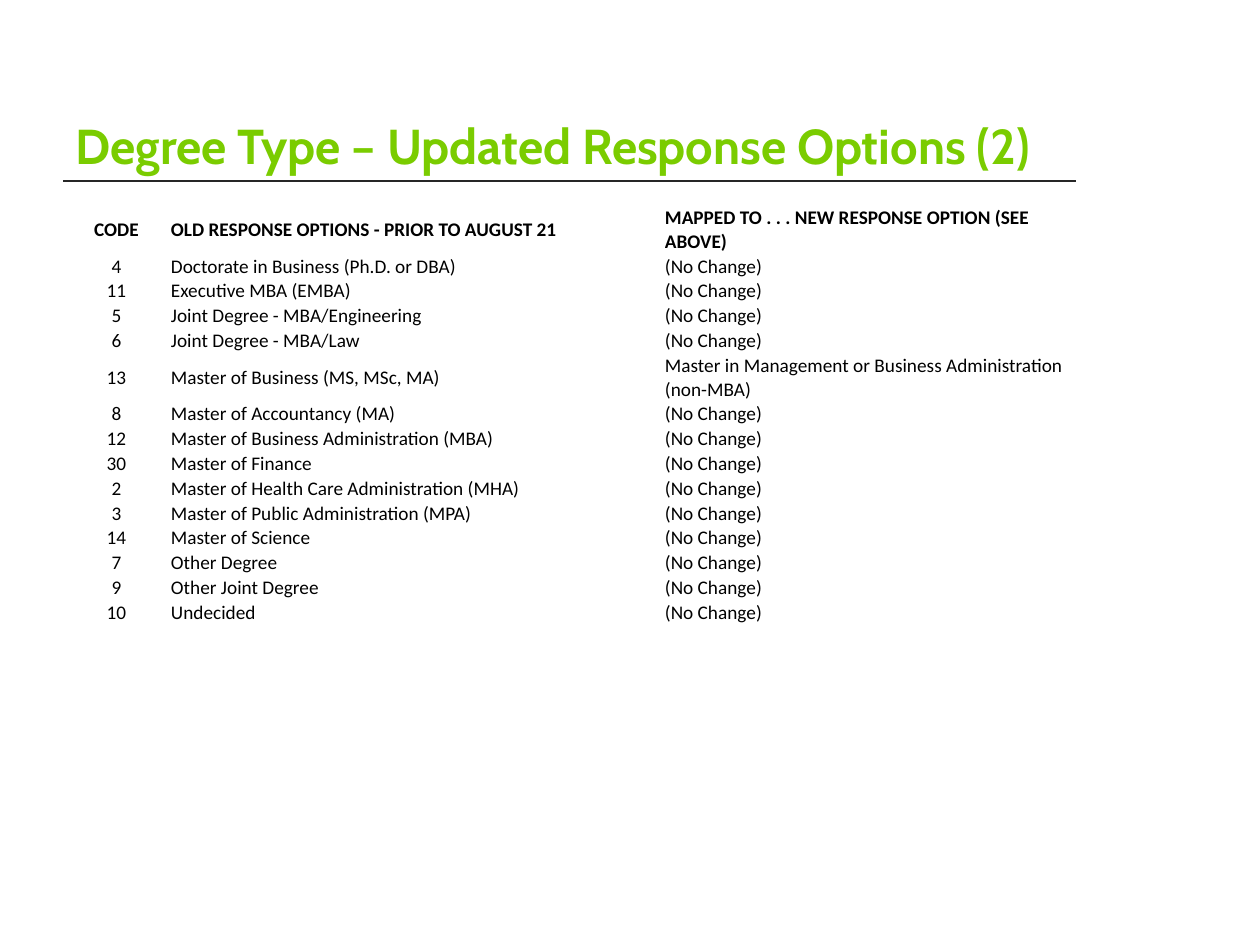
import pptx
import pptx.dml.color
import pptx.enum.shapes
import pptx.enum.text
import pptx.util
from dataclasses import dataclass
from lxml import etree

SCALE = 914400 / 126
ALIGN = pptx.enum.text.PP_ALIGN
ANCHOR = pptx.enum.text.MSO_ANCHOR
SAME = "(No Change)"

HEAD = ("CODE", "OLD RESPONSE OPTIONS - PRIOR TO AUGUST 21",
        "MAPPED TO . . . NEW RESPONSE OPTION (SEE ABOVE)")
DEGREES = [
    (4, "Doctorate in Business (Ph.D. or DBA)"),
    (11, "Executive MBA (EMBA)"),
    (5, "Joint Degree - MBA/Engineering"),
    (6, "Joint Degree - MBA/Law"),
    (13, "Master of Business (MS, MSc, MA)"),
    (8, "Master of Accountancy (MA)"),
    (12, "Master of Business Administration (MBA)"),
    (30, "Master of Finance"),
    (2, "Master of Health Care Administration (MHA)"),
    (3, "Master of Public Administration (MPA)"),
    (14, "Master of Science"),
    (7, "Other Degree"),
    (9, "Other Joint Degree"),
    (10, "Undecided"),
]
CHANGED = {13: "Master in Management or Business Administration (non-MBA)"}


@dataclass(frozen=True)
class Theme:
    green: str = "7ACC00"
    dark: str = "262626"
    black: str = "000000"
    display: str = "Cabin"
    text: str = "Calibri"
    large: int = 28
    small: int = 11
    lead: int = 36
    rule: float = 1.5


def px(n):
    return pptx.util.Emu(round(n * SCALE))


def rgb(code):
    return pptx.dml.color.RGBColor.from_string(code)


def write(frame, text, *, font, size, color, bold=False, align=ALIGN.LEFT, lead=None):
    frame.word_wrap = True
    para = frame.paragraphs[0]
    para.alignment = align
    if lead:
        para.line_spacing = pptx.util.Pt(lead)
    run = para.add_run()
    run.text = text
    run.font.name = font
    run.font.size = pptx.util.Pt(size)
    run.font.bold = bold
    run.font.color.rgb = rgb(color)


class Page:
    def __init__(self, deck, theme):
        self.theme = theme
        self.slide = deck.slides.add_slide(deck.slide_layouts[5])

    def title(self, text, x, y, w, h):
        shape = self.slide.shapes.title
        shape.left, shape.top, shape.width, shape.height = map(px, (x, y, w, h))
        frame = shape.text_frame
        frame.auto_size = pptx.enum.text.MSO_AUTO_SIZE.NONE
        frame.vertical_anchor = ANCHOR.BOTTOM
        style = self.theme
        write(frame, text, font=style.display, size=style.large,
              color=style.green, bold=True, lead=style.lead)

    def rule(self, x, y, w):
        line = self.slide.shapes.add_connector(
            pptx.enum.shapes.MSO_CONNECTOR.STRAIGHT, px(x), px(y), px(x + w), px(y))
        line.line.color.rgb = rgb(self.theme.dark)
        line.line.width = pptx.util.Pt(self.theme.rule)
        etree.SubElement(line._element.spPr, pptx.oxml.ns.qn("a:effectLst"))

    def table(self, rows, x, y, widths, height):
        grid = self.slide.shapes.add_table(
            len(rows), len(widths), px(x), px(y),
            px(sum(widths)), px(height * len(rows))).table
        grid.first_row = grid.horz_banding = False
        for col, width in zip(grid.columns, widths):
            col.width = px(width)
        for r, row in enumerate(rows):
            for c, text in enumerate(row):
                self.cell(grid.cell(r, c), str(text), bold=r == 0,
                          align=ALIGN.LEFT if c else ALIGN.CENTER)

    def cell(self, cell, text, bold, align):
        cell.fill.background()
        cell.vertical_anchor = ANCHOR.MIDDLE
        cell.margin_left = cell.margin_right = cell.margin_top = px(1)
        cell.margin_bottom = 0
        style = self.theme
        write(cell.text_frame, text, font=style.text, size=style.small,
              color=style.black, bold=bold, align=align)


def main():
    deck = pptx.Presentation()
    deck.slide_width, deck.slide_height = px(1260), px(945)
    page = Page(deck, Theme())
    left, width, base = 63, 1013, 181
    page.rule(left, base, width)
    page.title("Degree Type – Updated Response Options (2)", left, 44, width, base - 44)
    rows = [HEAD] + [(code, name, CHANGED.get(code, SAME)) for code, name in DEGREES]
    page.table(rows, left, 205, (107, 494, 412), 20)
    deck.save("out.pptx")


if __name__ == "__main__":
    main()
